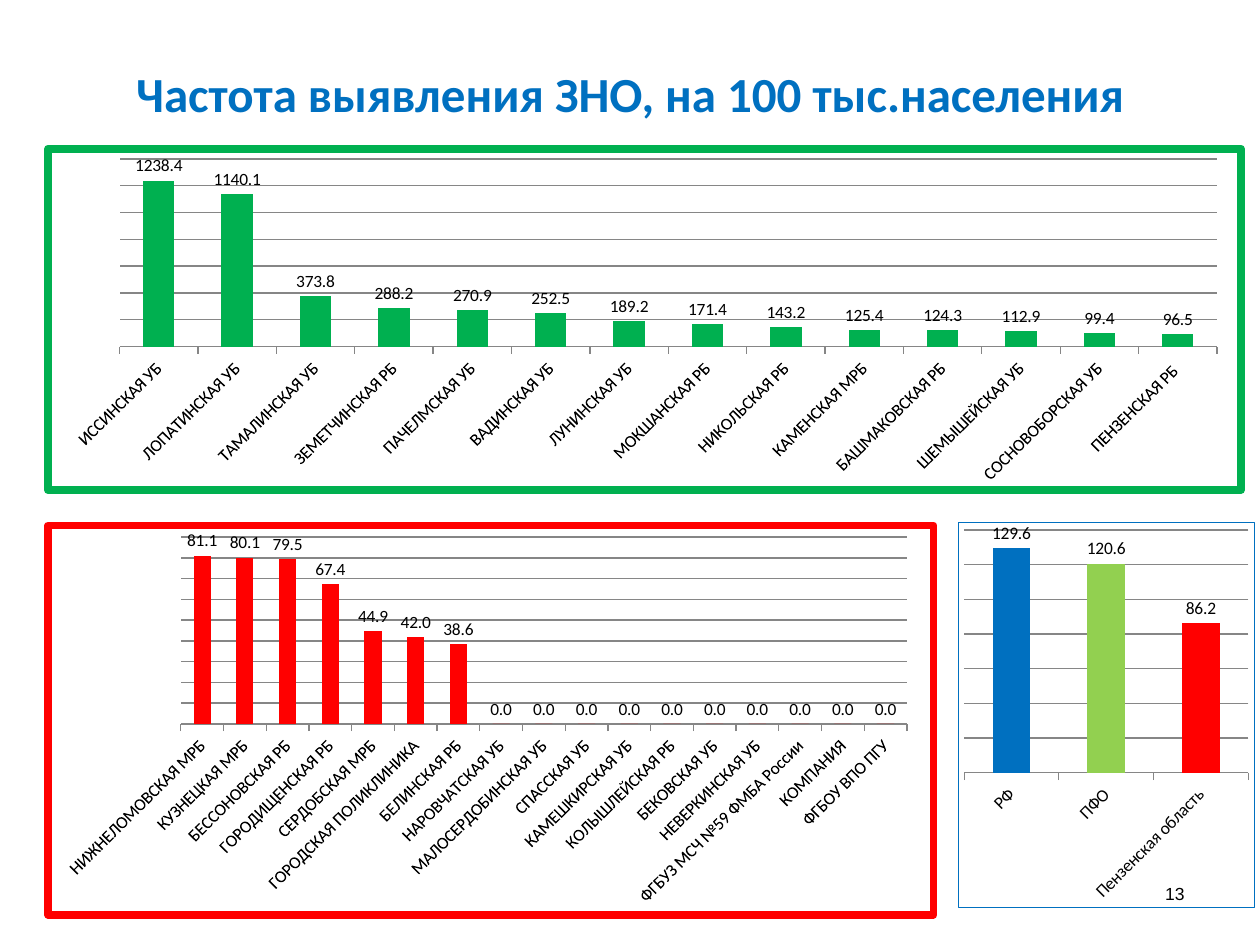
import pptx
import pptx.chart.data
import pptx.dml.color
import pptx.enum.chart
import pptx.enum.text
import pptx.oxml
import pptx.oxml.ns
import pptx.util
from pptx.util import Inches

BLUE, LIME, RED, GREEN = "0070C0", "92D050", "FF0000", "00B050"
BLACK, GRID = "000000", "868686"

LEADING_DISTRICTS = {
    "ИССИНСКАЯ УБ": 1238.4, "ЛОПАТИНСКАЯ УБ": 1140.1, "ТАМАЛИНСКАЯ УБ": 373.8,
    "ЗЕМЕТЧИНСКАЯ РБ": 288.2, "ПАЧЕЛМСКАЯ УБ": 270.9, "ВАДИНСКАЯ УБ": 252.5,
    "ЛУНИНСКАЯ УБ": 189.2, "МОКШАНСКАЯ РБ": 171.4, "НИКОЛЬСКАЯ РБ": 143.2,
    "КАМЕНСКАЯ МРБ": 125.4, "БАШМАКОВСКАЯ РБ": 124.3, "ШЕМЫШЕЙСКАЯ УБ": 112.9,
    "СОСНОВОБОРСКАЯ УБ": 99.4, "ПЕНЗЕНСКАЯ РБ ": 96.5,
}
LAGGING_DISTRICTS = {
    "НИЖНЕЛОМОВСКАЯ МРБ": 81.1, "КУЗНЕЦКАЯ МРБ": 80.1, "БЕССОНОВСКАЯ РБ": 79.5,
    "ГОРОДИЩЕНСКАЯ РБ": 67.4, "СЕРДОБСКАЯ МРБ": 44.9, "ГОРОДСКАЯ ПОЛИКЛИНИКА": 42.0,
    "БЕЛИНСКАЯ РБ": 38.6,
} | dict.fromkeys([
    "НАРОВЧАТСКАЯ УБ", "МАЛОСЕРДОБИНСКАЯ УБ", " СПАССКАЯ УБ", "КАМЕШКИРСКАЯ УБ",
    "КОЛЫШЛЕЙСКАЯ РБ", "БЕКОВСКАЯ УБ", "НЕВЕРКИНСКАЯ УБ",
    "ФГБУЗ МСЧ №59 ФМБА России", "КОМПАНИЯ", "ФГБОУ ВПО ПГУ",
], 0)
REGIONS = {"РФ": 129.6, "ПФО": 120.6, "Пензенская область": 86.2}


def rgb(hex_colour):
    return pptx.dml.color.RGBColor.from_string(hex_colour)


def apply(target, values):
    for name, value in values.items():
        setattr(target, name, value)


def style_font(font, size, name="Calibri", colour=BLACK, bold=False):
    apply(font, {"size": pptx.util.Pt(size), "name": name, "bold": bold})
    font.color.rgb = rgb(colour)


def fill_solid(fill, colour):
    fill.solid()
    fill.fore_color.rgb = rgb(colour)


def write(shape, text, align, **font):
    frame = shape.text_frame
    apply(frame, {"word_wrap": True, "auto_size": pptx.enum.text.MSO_AUTO_SIZE.NONE,
                  "vertical_anchor": pptx.enum.text.MSO_ANCHOR.MIDDLE})
    paragraph = frame.paragraphs[0]
    paragraph.alignment = align
    run = paragraph.add_run()
    run.text = text
    style_font(run.font, **font)
    return paragraph


def place_title(slide, box):
    title = slide.shapes.title
    apply(title, dict(zip(("left", "top", "width", "height"), map(Inches, box))))
    heading = write(title, "Частота выявления ЗНО, на 100 тыс.населения",
                    pptx.enum.text.PP_ALIGN.CENTER, size=28, colour=BLUE, bold=True)
    heading.line_spacing = 0.9


def place_page_number(slide, box):
    number = slide.shapes.add_textbox(*map(Inches, box))
    write(number, "13", pptx.enum.text.PP_ALIGN.RIGHT, size=10, name="Arial")


def frame_chart(chart, border, border_width, plot):
    """Outline the chart and fix its plot area, given as fractions of the chart."""
    ns = pptx.oxml.ns.nsdecls("c", "a")
    outline = pptx.oxml.parse_xml(
        f'<c:spPr {ns}><a:noFill/><a:ln w="{pptx.util.Pt(border_width)}"><a:solidFill>'
        f'<a:srgbClr val="{border}"/></a:solidFill><a:round/></a:ln></c:spPr>')
    chart.element.xpath("c:chart")[0].addnext(outline)

    modes = "".join(f'<c:{side}Mode val="edge"/>' for side in "xy")
    sizes = "".join(f'<c:{key} val="{part}"/>' for key, part in zip("xywh", plot))
    layout = pptx.oxml.parse_xml(
        f'<c:layout {ns}><c:manualLayout><c:layoutTarget val="inner"/>'
        f'{modes}{sizes}</c:manualLayout></c:layout>')
    plot_area = chart.element.xpath("c:chart/c:plotArea")[0]
    for old_layout in plot_area.xpath("c:layout"):
        plot_area.remove(old_layout)
    plot_area.insert(0, layout)
    plot_area.append(pptx.oxml.parse_xml(f"<c:spPr {ns}><a:noFill/></c:spPr>"))


def place_chart(slide, box, rates, colour, border, border_width, plot, top, step,
                point_colours=()):
    data = pptx.chart.data.CategoryChartData(number_format="0.0")
    data.categories = list(rates)
    data.add_series("Series 1", list(rates.values()))
    chart = slide.shapes.add_chart(pptx.enum.chart.XL_CHART_TYPE.COLUMN_CLUSTERED,
                                   *map(Inches, box), data).chart
    apply(chart, {"has_legend": False, "has_title": False})
    style_font(chart.font, 10)

    # Columns and their values
    columns = chart.plots[0]
    apply(columns, {"gap_width": 150, "vary_by_categories": False,
                    "has_data_labels": True})
    apply(columns.data_labels, {
        "show_value": True, "number_format": "0.0", "number_format_is_linked": False,
        "position": pptx.enum.chart.XL_LABEL_POSITION.OUTSIDE_END})
    style_font(columns.data_labels.font, 10)
    rate_series = columns.series[0]
    fill_solid(rate_series.format.fill, colour)
    for index, point_colour in enumerate(point_colours):
        fill_solid(rate_series.points[index].format.fill, point_colour)

    # Axes, with slanted category names
    apply(chart.value_axis, {"visible": False, "has_major_gridlines": True,
                             "minimum_scale": 0, "maximum_scale": top,
                             "major_unit": step})
    category_axis = chart.category_axis
    category_axis.major_tick_mark = pptx.enum.chart.XL_TICK_MARK.OUTSIDE
    style_font(category_axis.tick_labels.font, 10)
    chart.element.xpath(".//c:catAx/c:txPr/a:bodyPr")[0].set("rot", "-2700000")
    for line in (category_axis.format.line, chart.value_axis.major_gridlines.format.line):
        line.color.rgb = rgb(GRID)
        line.width = pptx.util.Pt(0.75)

    frame_chart(chart, border, border_width, plot)


def main():
    deck = pptx.Presentation()
    apply(deck, {"slide_width": Inches(10), "slide_height": Inches(7.5)})
    slide = deck.slides.add_slide(deck.slide_layouts[5])

    place_title(slide, (0.5, 0.3, 9, 0.93))
    place_page_number(slide, (7.17, 6.83, 2.33, 0.52))
    # Country, federal district and region
    place_chart(slide, (7.6, 4.14, 2.36, 3.07), REGIONS, "5B9BD5", BLUE, 0.75,
                (0.02, 0.02, 0.96, 0.63), 140, 20, (BLUE, LIME, RED))
    # Districts with high rates
    place_chart(slide, (0.35, 1.15, 9.53, 2.77), LEADING_DISTRICTS, GREEN, GREEN, 4.5,
                (0.06, 0.03, 0.92, 0.55), 1400, 200)
    # Districts with low rates
    place_chart(slide, (0.35, 4.14, 7.09, 3.15), LAGGING_DISTRICTS, RED, RED, 4.5,
                (0.15, 0.03, 0.82, 0.48), 90, 10)

    deck.save("out.pptx")


if __name__ == "__main__":
    main()
